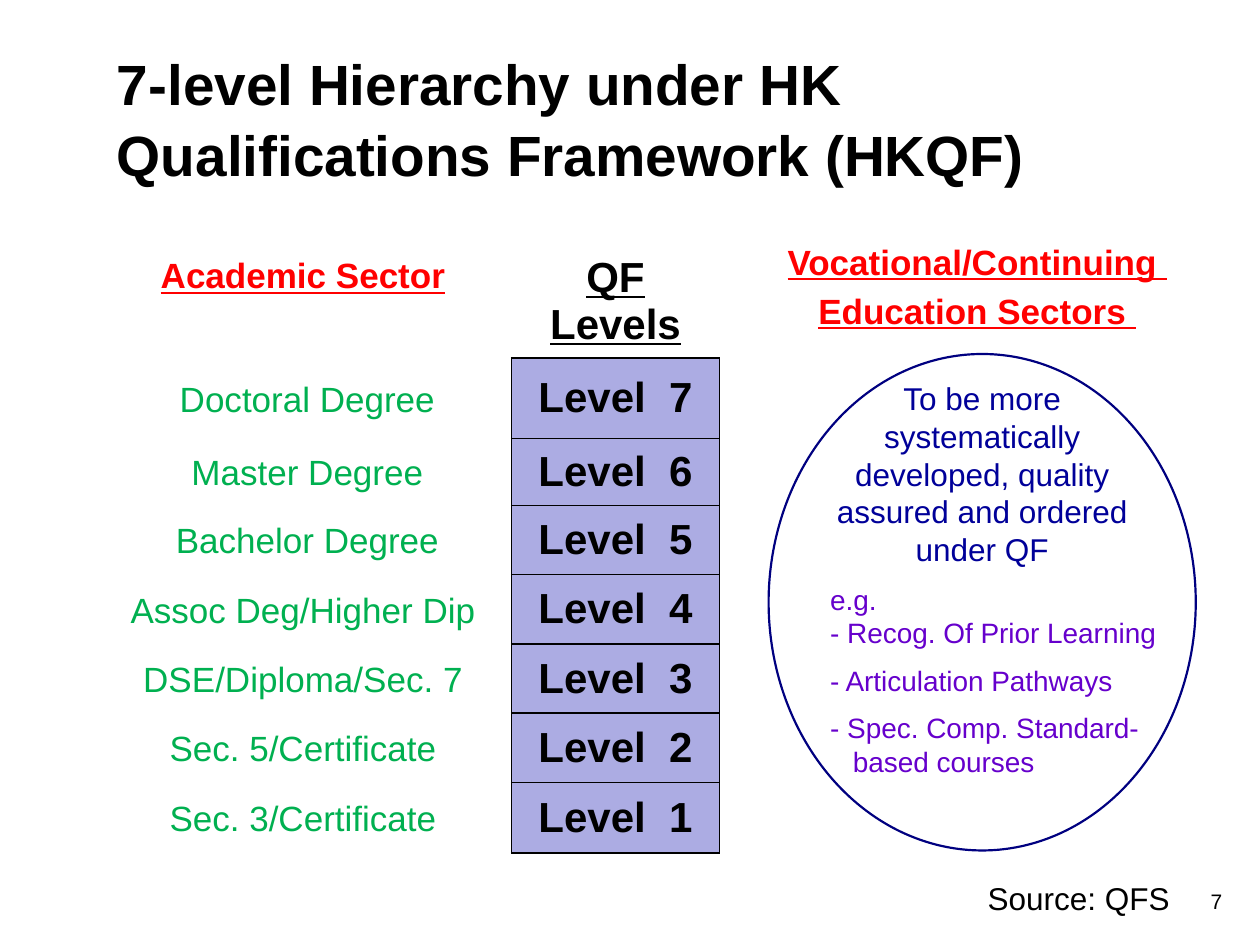
import pptx
import pptx.util
import pptx.dml.color
import pptx.enum.shapes
import pptx.enum.text
import lxml.etree

COLOURS = {
    "black": "000000", "red": "FF0000", "green": "00B050", "level": "5B5BC9",
    "navy": "000080", "blue": "000099", "purple": "6600CC",
}
ALIGN = pptx.enum.text.PP_ALIGN
ANCHOR = pptx.enum.text.MSO_ANCHOR
NAMESPACE = "http://schemas.openxmlformats.org/drawingml/2006/main"

deck = pptx.Presentation()
deck.slide_width = pptx.util.Inches(10)
deck.slide_height = pptx.util.Inches(7.5)
page = deck.slides.add_slide(deck.slide_layouts[6])
unit = deck.slide_width // 100


def grid(*cells):
    return [round(cell * unit) for cell in cells]


def write(frame, lines, size, colour, bold=False, underline=False, align=ALIGN.CENTER, anchor=ANCHOR.MIDDLE):
    frame.text = "\n".join(lines)
    frame.word_wrap = True
    frame.vertical_anchor = anchor
    for para in frame.paragraphs:
        para.alignment = align
        for span in para.runs:
            span.font.name = "Arial"
            span.font.size = pptx.util.Pt(size)
            span.font.bold = bold
            span.font.underline = underline
            span.font.color.rgb = pptx.dml.color.RGBColor.from_string(COLOURS[colour])
    return frame


title = page.shapes.add_textbox(*grid(8.3, 3, 90, 12.5))
write(title.text_frame, ["7-level Hierarchy under HK Qualifications Framework (HKQF)"],
      32.4, "black", bold=True, align=ALIGN.LEFT)
title.text_frame.paragraphs[0].line_spacing = 1.05

academic = page.shapes.add_table(2, 1, *grid(8.3, 18.6, 31.5, 49.5)).table
academic.first_row = academic.horz_banding = False
for row, height in zip(academic.rows, grid(6.7, 42.8)):
    row.height = height
    row.cells[0].fill.background()
heading = academic.cell(0, 0)
write(heading.text_frame, ["Academic Sector"], 20, "red", bold=True, underline=True)
heading.vertical_anchor = ANCHOR.MIDDLE

number = page.shapes.add_textbox(*grid(74.7, 69.5, 23.3, 4))
write(number.text_frame, ["7"], 12, "black", align=ALIGN.RIGHT)

table_top = 19.4
heights = [9, 6.4, 5.3, 5.5, 5.5, 5.5, 5.5, 5.6]
level_texts = ["QF Levels"] + [f"Level  {level}" for level in range(7, 0, -1)]
levels = page.shapes.add_table(len(heights), 1, *grid(40.6, table_top, 16.5, sum(heights))).table
levels.first_row = levels.horz_banding = False
for index, (text, height) in enumerate(zip(level_texts, heights)):
    is_heading = index == 0
    levels.rows[index].height = round(height * unit)
    cell = levels.cell(index, 0)
    write(cell.text_frame, [text], 24, "black", bold=True, underline=is_heading)
    cell.vertical_anchor = ANCHOR.MIDDLE
    properties = cell._tc.get_or_add_tcPr()
    if is_heading:
        cell.fill.background()
        sides = ["lnB"]
    else:
        cell.fill.solid()
        cell.fill.fore_color.rgb = pptx.dml.color.RGBColor.from_string(COLOURS["level"])
        colour_node = properties.find(f".//{{{NAMESPACE}}}srgbClr")
        lxml.etree.SubElement(colour_node, f"{{{NAMESPACE}}}alpha", val="50000")
        sides = ["lnL", "lnR", "lnT", "lnB"]
    for order, side in enumerate(sides):
        border = lxml.etree.Element(f"{{{NAMESPACE}}}{side}", w=str(pptx.util.Pt(1)))
        fill = lxml.etree.SubElement(border, f"{{{NAMESPACE}}}solidFill")
        lxml.etree.SubElement(fill, f"{{{NAMESPACE}}}srgbClr", val=COLOURS["black"])
        properties.insert(order, border)

oval = page.shapes.add_shape(pptx.enum.shapes.MSO_SHAPE.OVAL, *grid(61, 28.1, 33.9, 39.4))
oval.shadow.inherit = False
oval.fill.background()
oval.line.color.rgb = pptx.dml.color.RGBColor.from_string(COLOURS["navy"])
oval.line.width = pptx.util.Pt(1.25)

plans = page.shapes.add_textbox(*grid(61, 29.6, 33.9, 33.7))
write(plans.text_frame, [
    "To be more\vsystematically\vdeveloped, quality\vassured and ordered\vunder QF",
    "e.g.\v- Recog. Of Prior Learning",
    "- Articulation Pathways",
    "- Spec. Comp. Standard-\vbased courses",
], 16, "purple", align=ALIGN.LEFT, anchor=ANCHOR.TOP)
intro, *examples = plans.text_frame.paragraphs
intro.alignment = ALIGN.CENTER
for span in intro.runs:
    span.font.size = pptx.util.Pt(18)
    span.font.color.rgb = pptx.dml.color.RGBColor.from_string(COLOURS["blue"])
for para in examples:
    para.space_before = pptx.util.Pt(8)
    indent = para._p.get_or_add_pPr()
    indent.set("marL", str(pptx.util.Inches(0.39)))
    indent.set("indent", "0")
indent.set("marL", str(pptx.util.Inches(0.57)))
indent.set("indent", str(pptx.util.Inches(-0.18)))

sectors = page.shapes.add_textbox(*grid(56.3, 18.6, 42.5, 8.2))
write(sectors.text_frame, ["Vocational/Continuing ", "Education Sectors "],
      20, "red", bold=True, underline=True, anchor=ANCHOR.TOP)
for para in sectors.text_frame.paragraphs:
    para.space_after = pptx.util.Pt(4)

awards = ["Doctoral Degree", "Master Degree", "Bachelor Degree", "Assoc Deg/Higher Dip",
          "DSE/Diploma/Sec. 7", "Sec. 5/Certificate", "Sec. 3/Certificate"]
for index, award in enumerate(awards, start=1):
    left, width = (11.4, 26) if award.endswith("Degree") else (9.1, 29.9)
    middle = table_top + sum(heights[:index]) + heights[index] / 2
    box = page.shapes.add_textbox(*grid(left, middle - 2.2, width, 4.4))
    write(box.text_frame, [award], 20, "green")

credit = page.shapes.add_textbox(*grid(77.4, 69.3, 16.6, 4))
write(credit.text_frame, ["Source: QFS"], 18, "black", align=ALIGN.LEFT, anchor=ANCHOR.TOP)
credit.text_frame.word_wrap = False

deck.save("out.pptx")
